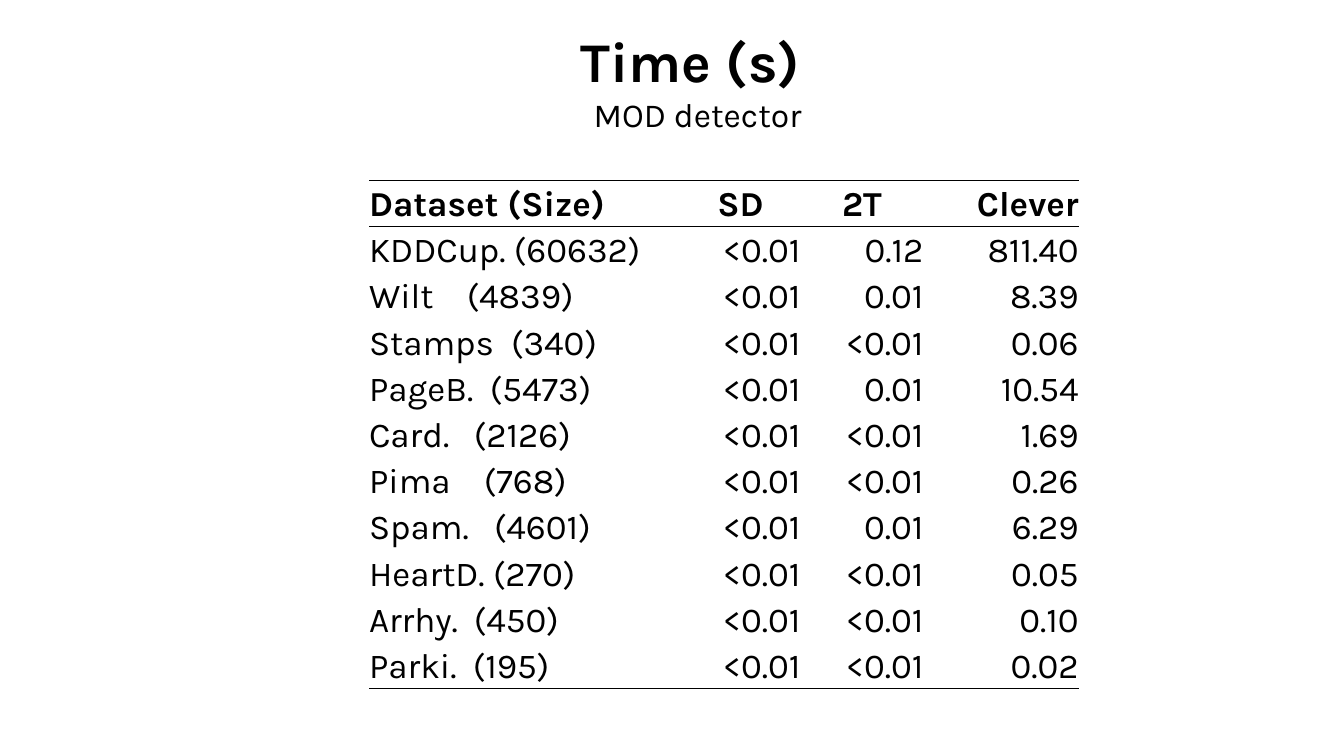
from lxml import etree
from pptx import Presentation
from pptx.dml.color import RGBColor
from pptx.enum.text import MSO_ANCHOR, MSO_AUTO_SIZE, PP_ALIGN
from pptx.oxml.ns import qn
from pptx.util import Inches, Pt

LEFT, CENTER, RIGHT = PP_ALIGN.LEFT, PP_ALIGN.CENTER, PP_ALIGN.RIGHT
MIDDLE = MSO_ANCHOR.MIDDLE
TOP = MSO_ANCHOR.TOP
GROW = MSO_AUTO_SIZE.SHAPE_TO_FIT_TEXT
TITLE_ONLY = 5
COLS, ROWS = 120, 60

COLORS = {"ink": "000000"}
TITLE_FORMAT = {"size": Pt(40), "bold": True}
SUBTITLE_FORMAT = {"size": Pt(24), "bold": False}
HEADER_FORMAT = {"size": Pt(25), "bold": True}
BODY_FORMAT = {"size": Pt(25), "bold": False}
CELL_FORMAT = {"margin_left": 0, "margin_right": 0, "margin_top": 0,
               "margin_bottom": 0, "vertical_anchor": TOP}

HEADER = ["Dataset (Size)", "SD", "2T", "Clever"]
TIMES = [
    ["KDDCup. (60632)", "<0.01", "0.12", "811.40"],
    ["Wilt\t(4839)", "<0.01", "0.01", "8.39"],
    ["Stamps\t(340)", "<0.01", "<0.01", "0.06"],
    ["PageB.\t(5473)", "<0.01", "0.01", "10.54"],
    ["Card.\t(2126)", "<0.01", "<0.01", "1.69"],
    ["Pima\t(768)", "<0.01", "<0.01", "0.26"],
    ["Spam.\t(4601)", "<0.01", "0.01", "6.29"],
    ["HeartD. (270)", "<0.01", "<0.01", "0.05"],
    ["Arrhy.\t(450)", "<0.01", "<0.01", "0.10"],
    ["Parki.\t(195)", "<0.01", "<0.01", "0.02"],
]
SIZE_STOPS = {"Wilt": 8.73, "Stamps": 12.69, "PageB.": 10.8, "Card.": 9.36,
              "Pima": 10.26, "Spam.": 11.16, "Arrhy.": 9.36, "Parki.": 9.27}


def apply(target, values):
    for name, value in values.items():
        setattr(target, name, value)


class Deck:
    font = "Karla"

    def __init__(self):
        self.prs = Presentation()
        self.prs.slide_width, self.prs.slide_height = Inches(13.33), Inches(7.5)
        self.s = self.prs.slides.add_slide(self.prs.slide_layouts[TITLE_ONLY])

    def x(self, cols):
        return round(self.prs.slide_width * cols / COLS)

    def y(self, rows):
        return round(self.prs.slide_height * rows / ROWS)

    def add_text(self, p, text, align, values):
        p.alignment = align
        r = p.add_run()
        r.text = text
        apply(r.font, {"name": self.font, **values})
        r.font.color.rgb = RGBColor.from_string(COLORS["ink"])

    def title(self, left, top, width, height, lines):
        sp = self.s.shapes.title
        apply(sp, {"left": self.x(left), "top": self.y(top),
                   "width": self.x(width), "height": self.y(height)})
        tf = sp.text_frame
        apply(tf, {"word_wrap": True, "vertical_anchor": MIDDLE, "auto_size": GROW})
        for i, (text, values) in enumerate(lines):
            p = tf.add_paragraph() if i else tf.paragraphs[0]
            self.add_text(p, text, CENTER, values)

    def borders(self, cell, ruled):
        tc_pr = cell._tc.get_or_add_tcPr()
        for side in ("L", "R", "T", "B"):
            ln = etree.SubElement(tc_pr, qn(f"a:ln{side}"), w=str(Pt(1)))
            if side in ruled:
                fill = etree.SubElement(ln, qn("a:solidFill"))
                etree.SubElement(fill, qn("a:srgbClr"), val=COLORS["ink"])
            else:
                etree.SubElement(ln, qn("a:noFill"))

    def tab_stop(self, p, cols):
        tabs = etree.SubElement(p._p.get_or_add_pPr(), qn("a:tabLst"))
        etree.SubElement(tabs, qn("a:tab"), pos=str(self.x(cols)), algn="l")

    def cell(self, cell, text, align, values, ruled):
        apply(cell, CELL_FORMAT)
        self.borders(cell, ruled)
        cell.fill.background()
        p = cell.text_frame.paragraphs[0]
        p.line_spacing = 1.1
        self.add_text(p, text, align, values)
        name, tab, _ = text.partition("\t")
        if tab:
            self.tab_stop(p, SIZE_STOPS[name])

    def table(self, left, top, widths, row_height, rows):
        table = self.s.shapes.add_table(
            len(rows), len(widths), self.x(left), self.y(top),
            self.x(sum(widths)), self.y(row_height * len(rows))).table
        apply(table, {"first_row": False, "horz_banding": False})
        for column, width in zip(table.columns, widths):
            column.width = self.x(width)
        rules = {0: "TB", 1: "T", len(rows) - 1: "B"}
        for i, row in enumerate(rows):
            aligns = [LEFT, RIGHT, RIGHT, RIGHT] if i else [LEFT, CENTER, CENTER, RIGHT]
            values = BODY_FORMAT if i else HEADER_FORMAT
            for j, (text, align) in enumerate(zip(row, aligns)):
                self.cell(table.cell(i, j), text, align, values, rules.get(i, ""))


def main():
    deck = Deck()
    deck.title(18.9, 1.68, 86.76, 9.44,
               [("Time (s) ", TITLE_FORMAT), ("MOD detector", SUBTITLE_FORMAT)])
    deck.table(32.95, 14.32, [27.81, 10.71, 10.98, 13.86], 3.32, [HEADER] + TIMES)
    deck.prs.save("out.pptx")


if __name__ == "__main__":
    main()
